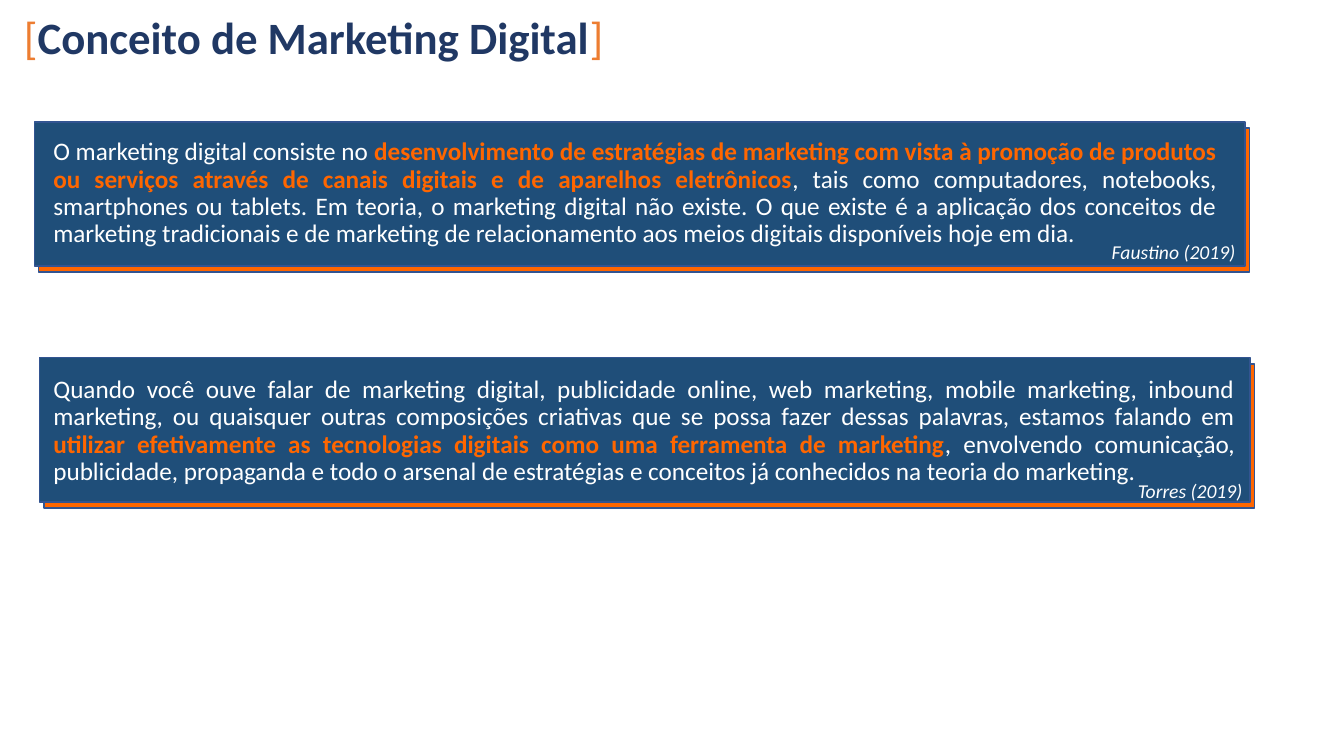
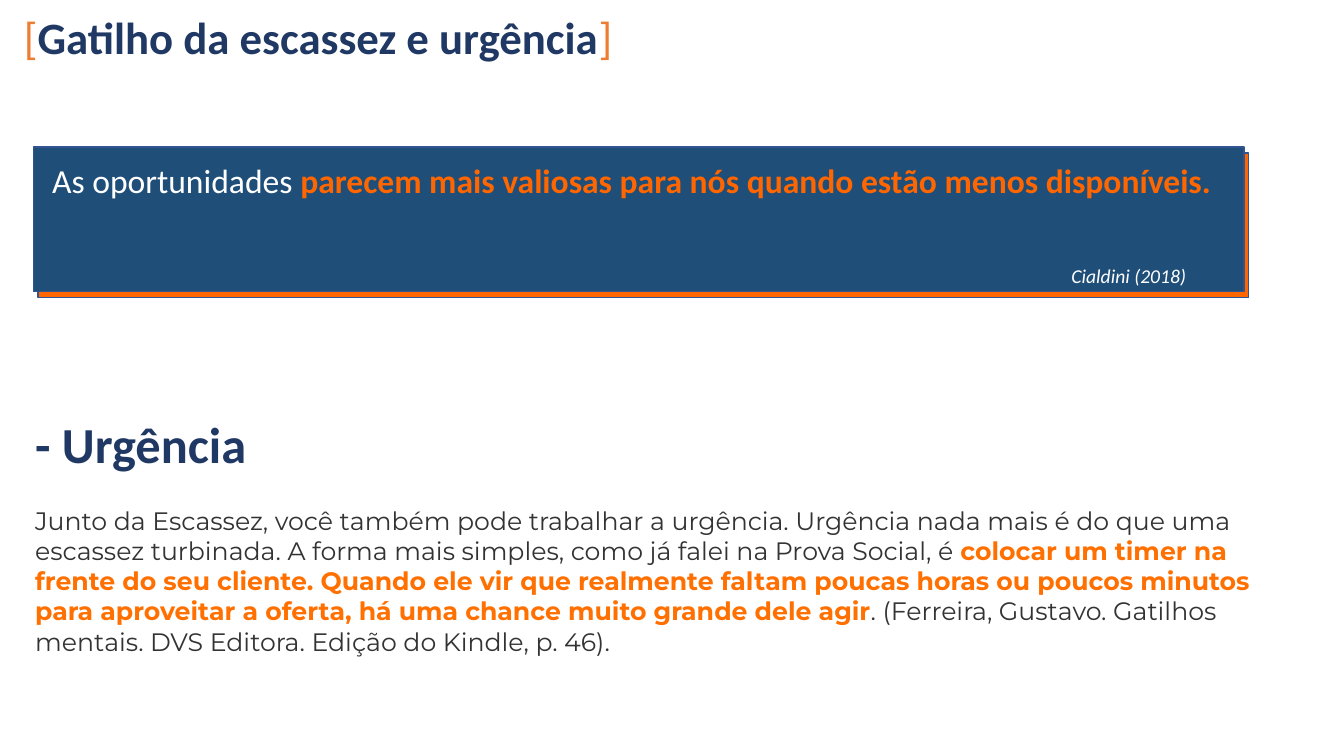
"""Build two slides on digital marketing and the urgency trigger."""
from pptx import Presentation
from pptx.dml.color import RGBColor
from pptx.enum.shapes import MSO_SHAPE
from pptx.enum.text import MSO_AUTO_SIZE, PP_ALIGN
from pptx.util import Pt

RECT = MSO_SHAPE.RECTANGLE
GROW = MSO_AUTO_SIZE.SHAPE_TO_FIT_TEXT
JUST = PP_ALIGN.JUSTIFY


class Theme:
    """Colours, type sizes and formats shared by the slides."""
    face, alt = "Calibri", "Montserrat"
    panel, edge, shade = "1F4E79", "325491", "FF6600"
    navy, gold, white = "203864", "ED7D31", "FFFFFF"
    dark, warm = "333333", "FF7000"
    head, sub, large, body, note = Pt(32), Pt(36), Pt(24), Pt(18), Pt(14)
    quote = {"alignment": JUST, "line_spacing": 0.9, "space_after": Pt(6)}


def write(shapes, box, runs, size, face=Theme.face, form=None):
    """Add a text box of (text, colour, font format) runs."""
    frame = shapes.add_textbox(*map(Pt, box)).text_frame
    frame.word_wrap, frame.auto_size = True, GROW
    para = frame.paragraphs[0]
    for key, value in (form or {}).items():
        setattr(para, key, value)
    for text, tint, style in runs:
        run = para.add_run()
        run.text = text
        for key, value in {"name": face, "size": size, **style}.items():
            setattr(run.font, key, value)
        run.font.color.rgb = RGBColor.from_string(tint)


BOLD, SLANT = {"bold": True}, {"italic": True}
WIDE, HIGH = 864.7, 103

pages = [
    ("Conceito de Marketing Digital", [
        {"spot": (24.5, 87.1), "box": (31, 95.8, 845.3, 85.7), "size": Theme.body,
         "text": ("O marketing digital consiste no ",
                  "desenvolvimento de estratégias de marketing com vista à promoção de "
                  "produtos ou serviços através de canais digitais e de aparelhos eletrônicos",
                  ", tais como computadores, notebooks, smartphones ou tablets. Em teoria, o "
                  "marketing digital não existe. O que existe é a aplicação dos conceitos de "
                  "marketing tradicionais e de marketing de relacionamento aos meios digitais "
                  "disponíveis hoje em dia."),
         "credit": ("Faustino (2019)", 787, 169.9)},
        {"spot": (28.1, 255.6), "box": (31, 265.7, 858.2, 85.7), "size": Theme.body,
         "text": ("Quando você ouve falar de marketing digital, publicidade online, web "
                  "marketing, mobile marketing, inbound marketing, ou quaisquer outras "
                  "composições criativas que se possa fazer dessas palavras, estamos falando em ",
                  "utilizar efetivamente as tecnologias digitais como uma ferramenta de marketing",
                  ", envolvendo comunicação, publicidade, propaganda e todo o arsenal de "
                  "estratégias e conceitos já conhecidos na teoria do marketing."),
         "credit": ("Torres (2019)", 805.7, 340.6)},
    ]),
    ("Gatilho da escassez e urgência", [
        {"spot": (23.8, 105.1), "box": (30.2, 113.8, 845.3, 33.1), "size": Theme.large,
         "text": ("As oportunidades ",
                  "parecem mais valiosas para nós quando estão menos disponíveis."),
         "credit": ("Cialdini (2018)", 758.2, 187.2)},
    ]),
]

deck = Presentation()
deck.slide_width, deck.slide_height = Pt(960), Pt(540)

for title, cards in pages:
    slide = deck.slides.add_slide(deck.slide_layouts[6])
    write(slide.shapes, (10, 3.6, 681, 46),
          [("[", Theme.gold, {}), (title, Theme.navy, BOLD), ("]", Theme.gold, {})],
          Theme.head)
    for card in cards:
        group = slide.shapes.add_group_shape().shapes
        left, top = card["spot"]
        for right, down, tint in ((3.2, 4.3, Theme.shade), (0, 0, Theme.panel)):
            rect = group.add_shape(RECT, Pt(left + right), Pt(top + down), Pt(WIDE), Pt(HIGH))
            rect.shadow.inherit = False
            rect.fill.solid()
            rect.fill.fore_color.rgb = RGBColor.from_string(tint)
            rect.line.color.rgb = RGBColor.from_string(Theme.edge)
            rect.line.width = Pt(1)
        looks = ((Theme.white, {}), (Theme.shade, BOLD), (Theme.white, {}))
        runs = [(text, *look) for text, look in zip(card["text"], looks)]
        write(group, card["box"], runs, card["size"], form=Theme.quote)
        name, left, top = card["credit"]
        write(group, (left, top, 150, 22.3), [(name, Theme.white, SLANT)],
              Theme.note, form=Theme.quote)

write(slide.shapes, (18, 291.6, 504, 51.1), [("- Urgência", Theme.navy, BOLD)], Theme.sub)
write(slide.shapes, (18, 357.1, 908.6, 116.6), [
    ("Junto da Escassez, você também pode trabalhar a urgência. Urgência nada mais é do que "
     "uma escassez turbinada. A forma mais simples, como já falei na Prova Social, é ",
     Theme.dark, {}),
    ("colocar um timer na frente do seu cliente. Quando ele vir que realmente faltam poucas "
     "horas ou poucos minutos para aproveitar a oferta, há uma chance muito grande dele agir",
     Theme.warm, BOLD),
    (". (Ferreira, Gustavo. Gatilhos mentais. DVS Editora. Edição do Kindle, p. 46).",
     Theme.dark, {}),
], Theme.body, Theme.alt)

deck.save("out.pptx")
